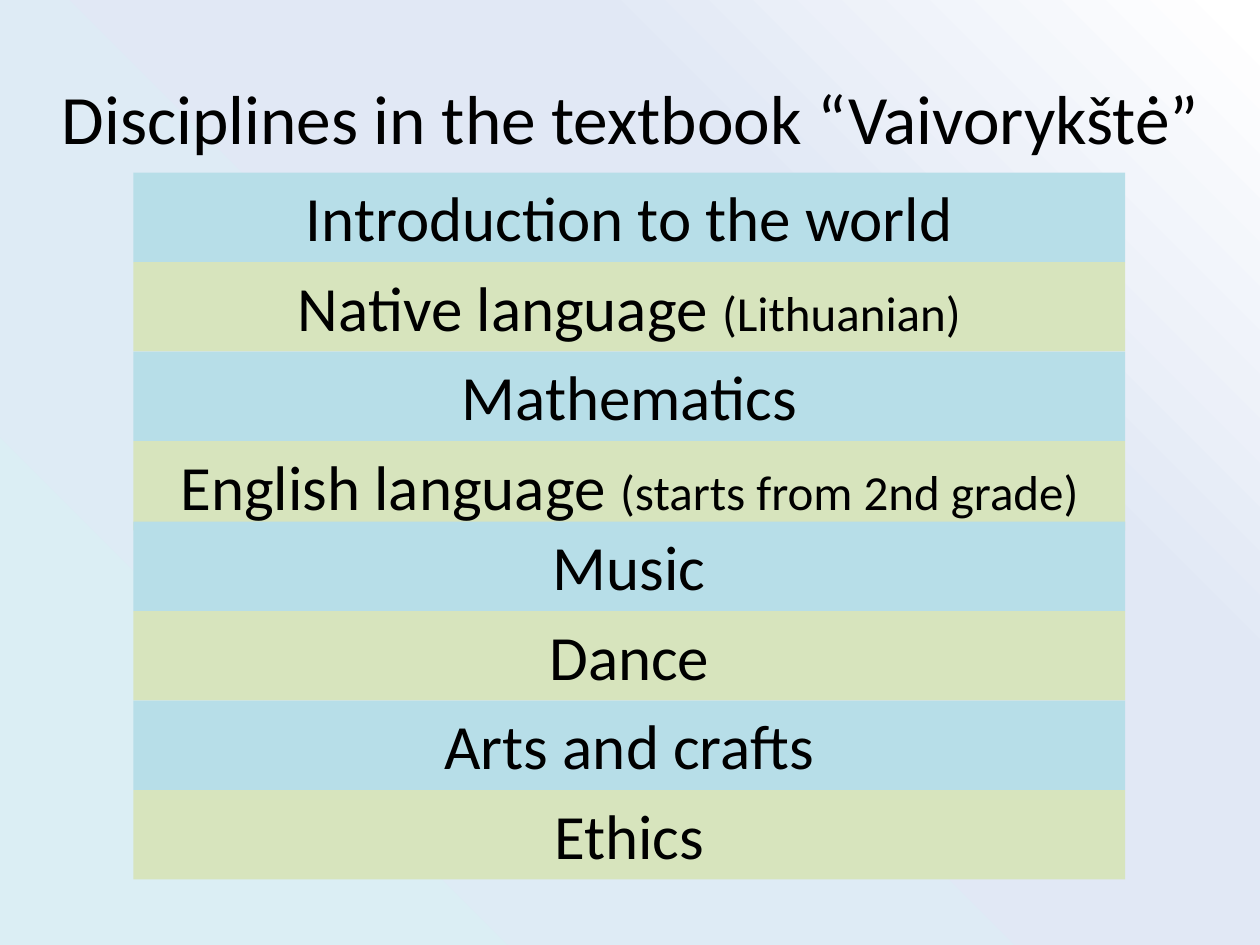
"""Build a slide listing the disciplines covered by a textbook."""
from pptx import Presentation
from pptx import oxml
from pptx import util as u
from pptx.dml import color
from pptx.enum import shapes, text
from pptx.oxml import ns

COLORS = {
    "text": "000000",
    "blue": "B7DEE8",
    "green": "D7E4BD",
    "bg_start": "DBEEF4",
    "bg_middle": "E1E8F5",
    "bg_end": "FFFFFF",
}
DISCIPLINES = [
    ("Introduction to the world", ""),
    ("Native language ", "(Lithuanian)"),
    ("Mathematics", ""),
    ("English language ", "(starts from 2nd grade)"),
    ("Music", ""),
    ("Dance", ""),
    ("Arts and crafts", ""),
    ("Ethics", ""),
]
ROW_HEIGHT = 0.71


def add_run(p, content, size=36, font="Calibri", fill="text"):
    p.alignment = text.PP_ALIGN.CENTER
    r = p.add_run()
    r.text = content
    r.font.size = u.Pt(size)
    r.font.name = font
    r.font.color.rgb = color.RGBColor.from_string(COLORS[fill])


prs = Presentation()
prs.slide_width, prs.slide_height = u.Inches(10), u.Inches(7.5)
s = prs.slides.add_slide(prs.slide_layouts[5])

stops = "".join(
    f'<a:gs pos="{pos * 1000}"><a:srgbClr val="{COLORS[name]}"/></a:gs>'
    for pos, name in [(0, "bg_start"), (69, "bg_middle"), (99, "bg_end")]
)
bg = oxml.parse_xml(
    f'<p:bg {ns.nsdecls("p", "a")}><p:bgPr><a:gradFill rotWithShape="1">'
    f'<a:gsLst>{stops}</a:gsLst><a:path path="circle">'
    '<a:fillToRect t="100000" r="100000"/></a:path></a:gradFill>'
    "<a:effectLst/></p:bgPr></p:bg>"
)
s.element.cSld.insert(0, bg)

title = s.shapes.title
title.left, title.top = u.Inches(0.28), u.Inches(0.3)
title.width, title.height = u.Inches(9.45), u.Inches(1.25)
tf = title.text_frame
tf.auto_size = text.MSO_AUTO_SIZE.NONE
tf.vertical_anchor = text.MSO_ANCHOR.MIDDLE
add_run(tf.paragraphs[0], "Disciplines in the textbook “Vaivorykštė”", size=39.6)

for i, (name, note) in enumerate(DISCIPLINES):
    overlap = 0.07 if i >= 4 else 0
    top = 1.37 + i * ROW_HEIGHT - overlap
    sp = s.shapes.add_shape(
        shapes.MSO_SHAPE.RECTANGLE,
        u.Inches(1.06), u.Inches(top), u.Inches(7.87), u.Inches(ROW_HEIGHT),
    )
    sp.shadow.inherit = False
    sp.fill.solid()
    sp.fill.fore_color.rgb = color.RGBColor.from_string(
        COLORS["green" if i % 2 else "blue"])
    sp.line.fill.background()
    tf = sp.text_frame
    tf.word_wrap = True
    tf.auto_size = text.MSO_AUTO_SIZE.SHAPE_TO_FIT_TEXT
    tf.vertical_anchor = text.MSO_ANCHOR.TOP
    p = tf.paragraphs[0]
    add_run(p, name)
    if note:
        add_run(p, note, size=28)

prs.save("out.pptx")
